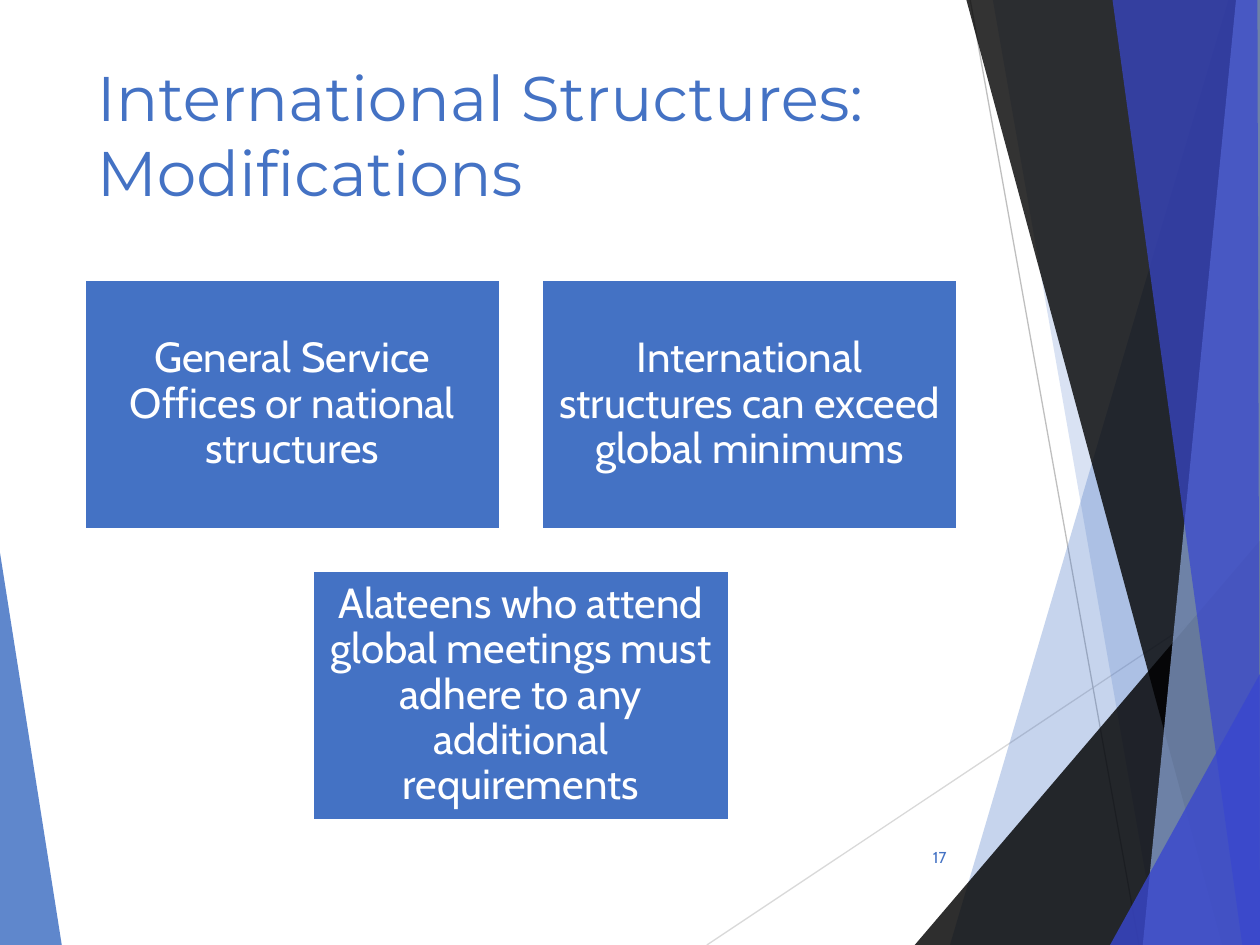
from dataclasses import dataclass

import pptx
import pptx.dml.color
import pptx.enum.shapes
import pptx.enum.text
import pptx.oxml.ns
import pptx.util

ALIGN = pptx.enum.text.PP_ALIGN
ANCHOR = pptx.enum.text.MSO_ANCHOR
BLUE, PALE, INDIGO, BLACK, WHITE = "4472C4", "8FAADC", "3947CF", "000000", "FFFFFF"

prs = pptx.Presentation()
prs.slide_width = pptx.util.Inches(10)
prs.slide_height = pptx.util.Inches(7.5)
slide = prs.slides.add_slide(prs.slide_layouts[6])


@dataclass
class Facet:
    points: list[tuple[float, float]]  # percent of slide width and height
    color: str
    alpha: int


@dataclass
class Ray:
    start: tuple[float, float]
    end: tuple[float, float]
    color: str


@dataclass
class Card:
    col: float
    row: float
    text: str


def x(percent: float) -> int:
    return round(prs.slide_width * percent / 100)


def y(percent: float) -> int:
    return round(prs.slide_height * percent / 100)


def rgb(color: str) -> pptx.dml.color.RGBColor:
    return pptx.dml.color.RGBColor.from_string(color)


def draw_facet(facet: Facet) -> None:
    first, *rest = [(x(px), y(py)) for px, py in facet.points]
    builder = slide.shapes.build_freeform(*first)
    builder.add_line_segments(rest, close=True)
    sp = builder.convert_to_shape()
    sp.shadow.inherit = False
    sp.line.fill.background()
    sp.fill.solid()
    sp.fill.fore_color.rgb = rgb(facet.color)
    clr = sp.fill._xPr.find(".//" + pptx.oxml.ns.qn("a:srgbClr"))
    alpha = clr.makeelement(pptx.oxml.ns.qn("a:alpha"), {"val": str(facet.alpha * 1000)})
    clr.append(alpha)


def draw_ray(ray: Ray) -> None:
    (x1, y1), (x2, y2) = ray.start, ray.end
    line = slide.shapes.add_connector(
        pptx.enum.shapes.MSO_CONNECTOR.STRAIGHT, x(x1), y(y1), x(x2), y(y2))
    line.line.color.rgb = rgb(ray.color)
    line.line.width = pptx.util.Pt(0.75)
    sp_pr = line._element.spPr
    sp_pr.append(sp_pr.makeelement(pptx.oxml.ns.qn("a:effectLst"), {}))


def write(sp, text: str, font: str, size: float, color: str,
          align: ALIGN, anchor: ANCHOR):
    tf = sp.text_frame
    tf.word_wrap = True
    tf.vertical_anchor = anchor
    tf.text = text
    p = tf.paragraphs[0]
    p.alignment = align
    r = p.runs[0]
    r.font.name = font
    r.font.size = pptx.util.Pt(size)
    r.font.color.rgb = rgb(color)
    return tf


# Cards sit on a grid whose gaps are a tenth of a card's width
CARD_W, CARD_H = x(33), y(26.4)
GAP = CARD_W // 10


def draw_card(card: Card) -> None:
    sp = slide.shapes.add_shape(
        pptx.enum.shapes.MSO_SHAPE.RECTANGLE,
        x(6.7) + round(card.col * (CARD_W + GAP)),
        y(29.6) + round(card.row * (CARD_H + GAP)), CARD_W, CARD_H)
    sp.shadow.inherit = False
    sp.fill.solid()
    sp.fill.fore_color.rgb = rgb(BLUE)
    sp.line.color.rgb = rgb(WHITE)
    sp.line.width = pptx.util.Pt(1.5)
    tf = write(sp, card.text, "Cabin", 24, WHITE, ALIGN.CENTER, ANCHOR.MIDDLE)
    tf.margin_left = tf.margin_right = pptx.util.Inches(0.1)
    tf.margin_top = tf.margin_bottom = pptx.util.Inches(0.1)
    tf.paragraphs[0].line_spacing = 0.9


# Background, from back to front
BACKGROUND = [
    Facet([(0, 58.5), (4.9, 100), (0, 100)], BLUE, 85),
    Ray((56.1, 100), (100, 61), "D9D9D9"),
    Ray((77, 0), (90.4, 100), "BFBFBF"),
    Facet([(97.5, 0), (75.4, 100), (100, 100), (100, 0)], BLUE, 30),
    Facet([(78.8, 0), (91.9, 100), (100, 100), (100, 0)], BLUE, 20),
    Facet([(72.6, 100), (100, 57.2), (100, 100)], BLACK, 82),
    Facet([(76.7, 0), (97, 100), (100, 100), (100, 0)], BLACK, 80),
    Facet([(98.1, 0), (90.7, 100), (100, 100), (100, 0)], PALE, 70),
    Facet([(88.3, 0), (98.6, 100), (100, 100), (99.8, 0)], INDIGO, 70),
    Facet([(88.1, 100), (100, 71.3), (100, 100)], INDIGO, 80),
]
for part in BACKGROUND:
    if isinstance(part, Facet):
        draw_facet(part)
    else:
        draw_ray(part)

# Title and slide number
title = slide.shapes.add_textbox(x(6.7), y(5.5), x(71.4), y(19.2))
write(title, "International Structures: Modifications", "Montserrat", 36, BLUE,
      ALIGN.LEFT, ANCHOR.TOP)
number = slide.shapes.add_textbox(x(70.5), y(88.1), x(5.6), y(5.3))
write(number, "17", "Cabin", 9, BLUE, ALIGN.RIGHT, ANCHOR.MIDDLE)

# Cards: two above, one centred below
CARDS = [
    Card(0, 0, "General Service Offices or national structures"),
    Card(1, 0, "International structures can exceed global minimums"),
    Card(0.5, 1, "Alateens who attend global meetings must adhere to any "
                 "additional requirements"),
]
for card in CARDS:
    draw_card(card)

prs.save("out.pptx")
